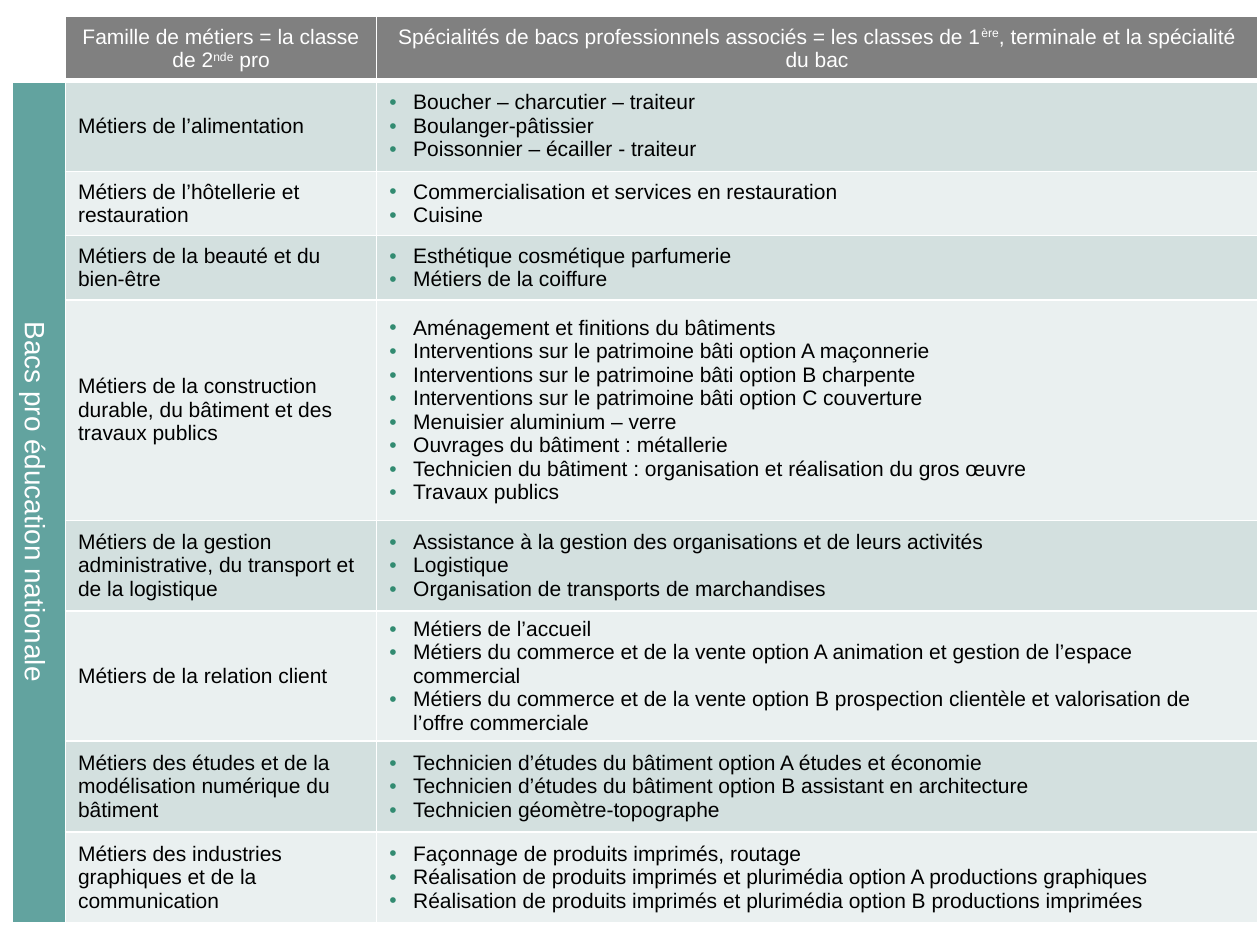
from lxml import etree
from pptx import Presentation
from pptx import util as u
from pptx.dml.color import RGBColor
from pptx.enum import text
from pptx.oxml import ns

WHITE = RGBColor(0xFF, 0xFF, 0xFF)
BLACK = RGBColor(0x00, 0x00, 0x00)
GREY = RGBColor(0x80, 0x80, 0x80)
TEAL = RGBColor(0x62, 0xA3, 0x9F)
GREEN = RGBColor(0x32, 0x8B, 0x71)
BANDS = (RGBColor(0xD3, 0xE0, 0xDF), RGBColor(0xEA, 0xF0, 0xF0))

COLUMNS = (0.42, 2.47, 6.99)
ROWS = (0.51, 0.72, 0.51, 0.51, 1.75, 0.72, 0.93, 0.72, 0.72)
INDENT = u.Inches(0.19)

HEADINGS = (
    ("Famille de métiers = la classe de 2", "nde", " pro"),
    ("Spécialités de bacs professionnels associés = les classes de 1", "ère",
     ", terminale et la spécialité du bac"),
)
FAMILIES = (
    ("Métiers de l’alimentation", (
        "Boucher – charcutier – traiteur",
        "Boulanger-pâtissier",
        "Poissonnier – écailler - traiteur")),
    ("Métiers de l’hôtellerie et restauration", (
        "Commercialisation et services en restauration",
        "Cuisine")),
    ("Métiers de la beauté et du bien-être", (
        "Esthétique cosmétique parfumerie",
        "Métiers de la coiffure")),
    ("Métiers de la construction durable, du bâtiment et des travaux publics", (
        "Aménagement et finitions du bâtiments",
        "Interventions sur le patrimoine bâti option A maçonnerie",
        "Interventions sur le patrimoine bâti option B charpente",
        "Interventions sur le patrimoine bâti option C couverture",
        "Menuisier aluminium – verre",
        "Ouvrages du bâtiment : métallerie",
        "Technicien du bâtiment : organisation et réalisation du gros œuvre",
        "Travaux publics")),
    ("Métiers de la gestion administrative, du transport et de la logistique", (
        "Assistance à la gestion des organisations et de leurs activités",
        "Logistique",
        "Organisation de transports de marchandises")),
    ("Métiers de la relation client", (
        "Métiers de l’accueil",
        "Métiers du commerce et de la vente option A animation et gestion de "
        "l’espace commercial",
        "Métiers du commerce et de la vente option B prospection clientèle et "
        "valorisation de l’offre commerciale")),
    ("Métiers des études et de la modélisation numérique du bâtiment", (
        "Technicien d’études du bâtiment option A études et économie",
        "Technicien d’études du bâtiment option B assistant en architecture",
        "Technicien géomètre-topographe")),
    ("Métiers des industries graphiques et de la communication", (
        "Façonnage de produits imprimés, routage",
        "Réalisation de produits imprimés et plurimédia option A productions graphiques",
        "Réalisation de produits imprimés et plurimédia option B productions imprimées")),
)


def add_child(parent, tag, **attributes):
    return etree.SubElement(parent, ns.qn(tag), attributes)


def add_span(para, words, color, size=12, raised=False):
    span = para.add_run()
    span.text = words
    span.font.name = "Arial"
    span.font.size = u.Pt(size)
    span.font.color.rgb = color
    if raised:
        span._r.get_or_add_rPr().set("baseline", "30000")


def add_bullet(para):
    properties = para._p.get_or_add_pPr()
    properties.set("marL", str(INDENT))
    properties.set("indent", str(-INDENT))
    color = add_child(properties, "a:buClr")
    add_child(color, "a:srgbClr", val=str(GREEN))
    add_child(properties, "a:buFont", typeface="Arial")
    add_child(properties, "a:buChar", char="•")


def set_borders(cell, top, bottom):
    properties = cell._tc.get_or_add_tcPr()
    for side, width in (("L", 1), ("R", 1), ("T", top), ("B", bottom)):
        line = add_child(properties, f"a:ln{side}", w=str(u.Pt(width)))
        fill = add_child(line, "a:solidFill")
        add_child(fill, "a:srgbClr", val=str(WHITE))


def fill_cell(cell, color):
    cell.fill.solid()
    cell.fill.fore_color.rgb = color
    cell.vertical_anchor = text.MSO_ANCHOR.MIDDLE


def add_grid(page):
    frame = page.shapes.add_table(
        len(ROWS), len(COLUMNS), u.Inches(0.1), u.Inches(0.13),
        u.Inches(sum(COLUMNS)), u.Inches(sum(ROWS)))
    table = frame.table
    table.first_row = table.horz_banding = False
    for column, width in zip(table.columns, COLUMNS):
        column.width = u.Inches(width)
    for index, (row, height) in enumerate(zip(table.rows, ROWS)):
        row.height = u.Inches(height)
        for cell in row.cells:
            set_borders(cell, 3 if index == 1 else 1, 3 if index == 0 else 1)
    return table


def add_headings(table):
    table.cell(0, 0).fill.background()
    for column, (start, suffix, end) in enumerate(HEADINGS, 1):
        cell = table.cell(0, column)
        fill_cell(cell, GREY)
        para = cell.text_frame.paragraphs[0]
        para.alignment = text.PP_ALIGN.CENTER
        add_span(para, start, WHITE)
        add_span(para, suffix, WHITE, raised=True)
        add_span(para, end, WHITE)


def add_side_title(table):
    cell = table.cell(1, 0)
    cell.merge(table.cell(len(ROWS) - 1, 0))
    fill_cell(cell, TEAL)
    cell._tc.get_or_add_tcPr().set("vert", "vert")
    para = cell.text_frame.paragraphs[0]
    para.alignment = text.PP_ALIGN.CENTER
    add_span(para, "Bacs pro éducation nationale", WHITE, 16)


def add_family(table, row, family, specialities):
    name_cell, list_cell = table.cell(row, 1), table.cell(row, 2)
    for cell in (name_cell, list_cell):
        fill_cell(cell, BANDS[(row - 1) % 2])
    add_span(name_cell.text_frame.paragraphs[0], family, BLACK)
    body = list_cell.text_frame
    for index, speciality in enumerate(specialities):
        para = body.add_paragraph() if index else body.paragraphs[0]
        add_bullet(para)
        add_span(para, speciality, BLACK)


def main():
    deck = Presentation()
    deck.slide_width, deck.slide_height = u.Inches(10), u.Inches(7.5)
    page = deck.slides.add_slide(deck.slide_layouts[6])
    table = add_grid(page)
    add_headings(table)
    add_side_title(table)
    for row, (family, specialities) in enumerate(FAMILIES, 1):
        add_family(table, row, family, specialities)
    deck.save("out.pptx")


if __name__ == "__main__":
    main()
